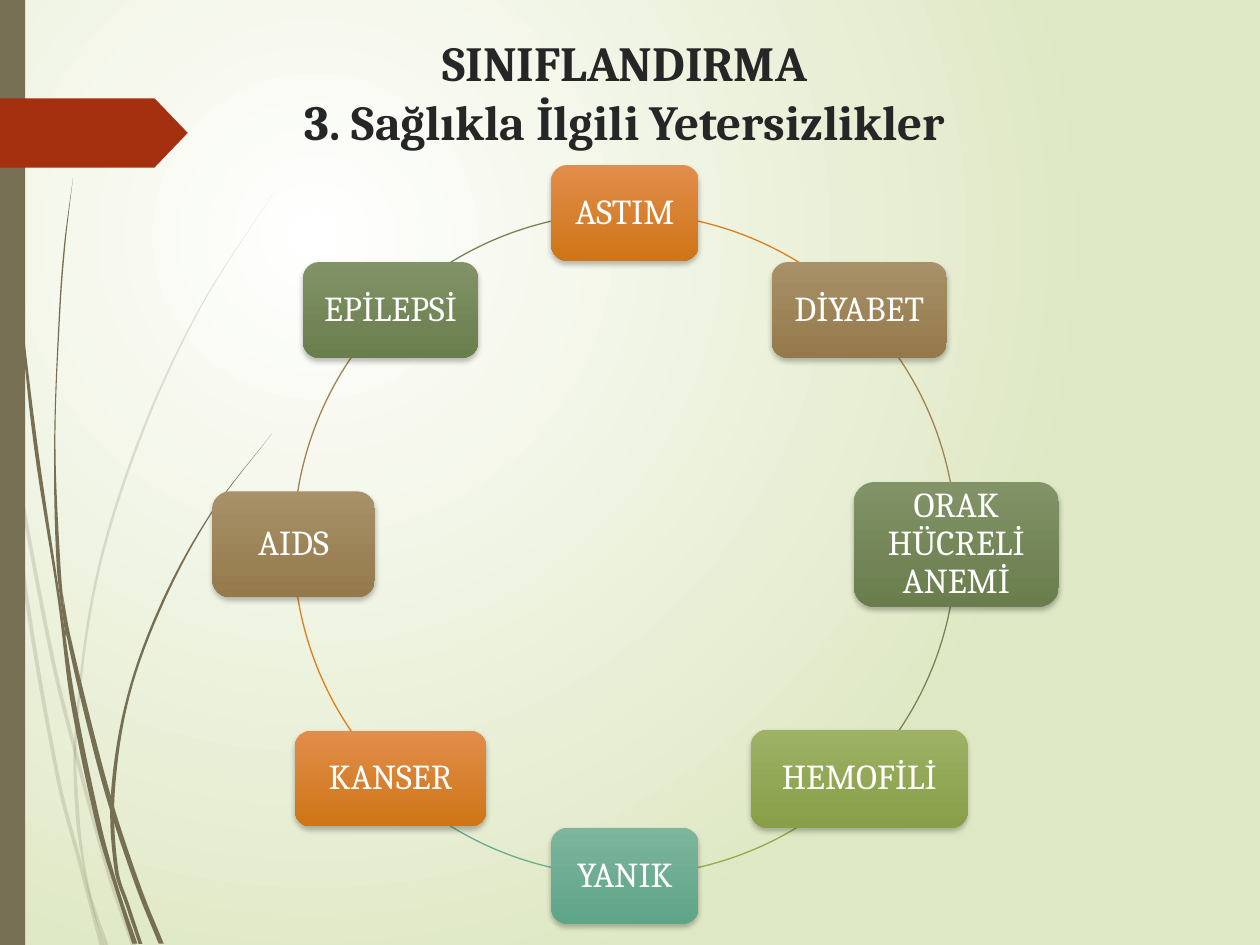
"""Build a slide with a ring of eight health-related conditions."""
import math

import lxml.etree
import pptx
import pptx.dml.color
import pptx.enum.shapes
import pptx.enum.text
import pptx.oxml.ns
import pptx.util

RGB = pptx.dml.color.RGBColor
SHAPE = pptx.enum.shapes.MSO_SHAPE
ALIGN = pptx.enum.text.PP_ALIGN
ANCHOR = pptx.enum.text.MSO_ANCHOR
Inches, Pt, qn = pptx.util.Inches, pptx.util.Pt, pptx.oxml.ns.qn

WHITE = RGB(0xFF, 0xFF, 0xFF)
PALE_GREEN = RGB(0xDF, 0xE8, 0xC4)
BARK = RGB(0x76, 0x6F, 0x54)
RED = RGB(0xA5, 0x30, 0x10)
INK = RGB(0x26, 0x26, 0x26)
ORANGE = (RGB(0xE1, 0x8D, 0x4C), RGB(0xCF, 0x75, 0x16), RGB(0xDE, 0x7E, 0x18))
BROWN = (RGB(0xA8, 0x90, 0x68), RGB(0x94, 0x7A, 0x4B), RGB(0x9F, 0x83, 0x51))
MOSS = (RGB(0x81, 0x93, 0x67), RGB(0x6A, 0x7D, 0x4D), RGB(0x72, 0x86, 0x53))
LIME = (RGB(0x9D, 0xB2, 0x65), RGB(0x88, 0x9E, 0x47), RGB(0x92, 0xAA, 0x4C))
TEAL = (RGB(0x7D, 0xB5, 0x9D), RGB(0x5E, 0xA5, 0x88), RGB(0x6A, 0xAC, 0x91))

FONT = "Cambria"
WIDTH, HEIGHT = 10, 7.5
TITLE = ["SINIFLANDIRMA", "3. Sağlıkla İlgili Yetersizlikler"]
CENTER_X, CENTER_Y, RADIUS = 4.96, 4.32, 2.63
CONDITIONS = [
    ("ASTIM", 1.17, 0.76, ORANGE),
    ("DİYABET", 1.39, 0.76, BROWN),
    ("ORAK HÜCRELİ ANEMİ", 1.63, 0.99, MOSS),
    ("HEMOFİLİ", 1.72, 0.78, LIME),
    ("YANIK", 1.17, 0.76, TEAL),
    ("KANSER", 1.52, 0.76, ORANGE),
    ("AIDS", 1.29, 0.84, BROWN),
    ("EPİLEPSİ", 1.39, 0.76, MOSS),
]
STEP = 360 / len(CONDITIONS)

FAINT_STRANDS = [
    [(0.12, 3.76, 0.03), (0.4, 5.22, 0.03), (0.59, 5.99, 0.03), (0.85, 6.94, 0.03), (1.04, 7.5, 0.04)],
    [(0.1, 3.76, 0.02), (0.19, 4.7, 0.03), (0.45, 6.2, 0.03), (0.62, 6.85, 0.03), (0.79, 7.5, 0.03)],
    [(2.17, 1.53, 0), (1.58, 2.45, 0.01), (1.1, 3.48, 0.02), (0.75, 4.62, 0.02), (0.59, 5.85, 0.02),
     (0.6, 6.46, 0.03), (0.65, 6.83, 0.02), (0.71, 7.12, 0.02), (0.82, 7.5, 0.04)],
]
STRANDS = [
    [(0.14, 2.33, 0.01), (0.27, 3.55, 0.03), (0.46, 4.77, 0.02), (0.56, 5.57, 0.04), (0.77, 6.58, 0.04),
     (0.92, 7.08, 0.03), (1.05, 7.49, 0.04)],
    [(0.5, 4.72, 0), (0.53, 5.05, 0.03), (0.73, 5.91, 0.04), (0.88, 6.45, 0.04), (1.09, 7.07, 0.04),
     (1.26, 7.49, 0.04)],
    [(0.58, 1.41, 0), (0.51, 1.93, 0.01), (0.47, 2.45, 0.01), (0.43, 3.49, 0.01), (0.45, 4.49, 0.03),
     (0.52, 5.05, 0.01)],
    [(2.16, 3.44, 0), (1.68, 4.06, 0.01), (1.29, 4.76, 0.02), (1.01, 5.52, 0.02), (0.88, 6.31, 0.03),
     (0.91, 6.91, 0.03), (1, 7.19, 0.03), (1.1, 7.49, 0.03)],
]


def style(sp, color=None):
    sp.shadow.inherit = False
    sp.line.fill.background()
    if color is not None:
        sp.fill.solid()
        sp.fill.fore_color.rgb = color


def grade(fill, colors):
    fill.gradient()
    for stop, color in zip(fill.gradient_stops, colors):
        stop.color.rgb = color


def smooth(ys, values, steps=8):
    last = len(ys) - 1
    slopes = []
    for i in range(len(ys)):
        a, b = max(i - 1, 0), min(i + 1, last)
        slopes.append((values[b] - values[a]) / (ys[b] - ys[a]))
    points = []
    for i in range(last):
        h = ys[i + 1] - ys[i]
        for k in range(steps + (i == last - 1)):
            t = k / steps
            bend = t * (1 - t) * h * ((1 - t) * slopes[i] - t * slopes[i + 1])
            ease = t * t * (3 - 2 * t)
            x = values[i] + ease * (values[i + 1] - values[i]) + bend
            points.append((Inches(x), Inches(ys[i] + t * h)))
    return points


def add_strand(s, strand, alpha=None):
    ys = [y for x, y, w in strand]
    left = smooth(ys, [x for x, y, w in strand])
    right = smooth(ys, [x + w for x, y, w in strand])
    outline = left + right[::-1]
    builder = s.shapes.build_freeform(*outline[0])
    builder.add_line_segments(outline[1:], close=True)
    sp = builder.convert_to_shape()
    style(sp, BARK)
    if alpha:
        color = sp._element.spPr.find(qn("a:solidFill"))[0]
        lxml.etree.SubElement(color, qn("a:alpha"), val=str(alpha * 1000))


def add_text(p, text, size, color, bold=False):
    r = p.add_run()
    r.text = text
    r.font.name, r.font.size, r.font.bold = FONT, Pt(size), bold
    r.font.color.rgb = color


def add_arc(s, index, color):
    box = (CENTER_X - RADIUS, CENTER_Y - RADIUS, 2 * RADIUS, 2 * RADIUS)
    sp = s.shapes.add_shape(SHAPE.ARC, *map(Inches, box))
    for k in range(2):
        sp.adjustments[k] = ((index + k) * STEP - 90) % 360 * 0.6
    style(sp)
    sp.fill.background()
    sp.line.color.rgb = color
    sp.line.width = Pt(0.75)


def add_condition(s, index, text, w, h, colors):
    angle = math.radians(index * STEP - 90)
    x = CENTER_X + RADIUS * math.cos(angle) - w / 2
    y = CENTER_Y + RADIUS * math.sin(angle) - h / 2
    sp = s.shapes.add_shape(SHAPE.ROUNDED_RECTANGLE, *map(Inches, (x, y, w, h)))
    style(sp)
    grade(sp.fill, colors)
    sp.fill.gradient_angle = 270
    effects = sp._element.spPr.find(qn("a:effectLst"))
    shadow = lxml.etree.SubElement(effects, qn("a:outerShdw"), blurRad=str(Pt(3)), dist=str(Pt(2)),
                                   dir="5400000", rotWithShape="0")
    black = lxml.etree.SubElement(shadow, qn("a:srgbClr"), val="000000")
    lxml.etree.SubElement(black, qn("a:alpha"), val="25000")
    tf = sp.text_frame
    tf.word_wrap = True
    tf.vertical_anchor = ANCHOR.MIDDLE
    tf.margin_left = tf.margin_right = tf.margin_top = tf.margin_bottom = Inches(0.08)
    p = tf.paragraphs[0]
    p.alignment, p.line_spacing = ALIGN.CENTER, 0.9
    add_text(p, text, 20, WHITE)


def add_background(s):
    grade(s.background.fill, (WHITE, PALE_GREEN))
    grad = s._element.find(".//" + qn("a:gradFill"))
    grad.remove(grad.find(qn("a:lin")))
    circle = lxml.etree.SubElement(grad, qn("a:path"), path="circle")
    lxml.etree.SubElement(circle, qn("a:fillToRect"), l="50000", t="50000", r="100000", b="100000")


def add_title(s):
    tf = s.shapes.add_textbox(*map(Inches, (0.51, 0.21, 8.9, 1.02))).text_frame
    tf.word_wrap = True
    p = tf.paragraphs[0]
    p.alignment = ALIGN.CENTER
    for i, line in enumerate(TITLE):
        if i:
            p.add_line_break()
        add_text(p, line, 28, INK, True)


def main():
    prs = pptx.Presentation()
    prs.slide_width, prs.slide_height = Inches(WIDTH), Inches(HEIGHT)
    s = prs.slides.add_slide(prs.slide_layouts[6])
    add_background(s)
    for strand in FAINT_STRANDS:
        add_strand(s, strand, 20)
    for strand in STRANDS:
        add_strand(s, strand)
    style(s.shapes.add_shape(SHAPE.RECTANGLE, 0, 0, Inches(0.2), prs.slide_height), BARK)
    tag = s.shapes.add_shape(SHAPE.PENTAGON, *map(Inches, (0, 0.78, 1.49, 0.55)))
    tag.adjustments[0] = 0.48
    style(tag, RED)
    add_title(s)
    for i, condition in enumerate(CONDITIONS):
        add_arc(s, i, condition[3][2])
    for i, condition in enumerate(CONDITIONS):
        add_condition(s, i, *condition)
    prs.save("out.pptx")


if __name__ == "__main__":
    main()
